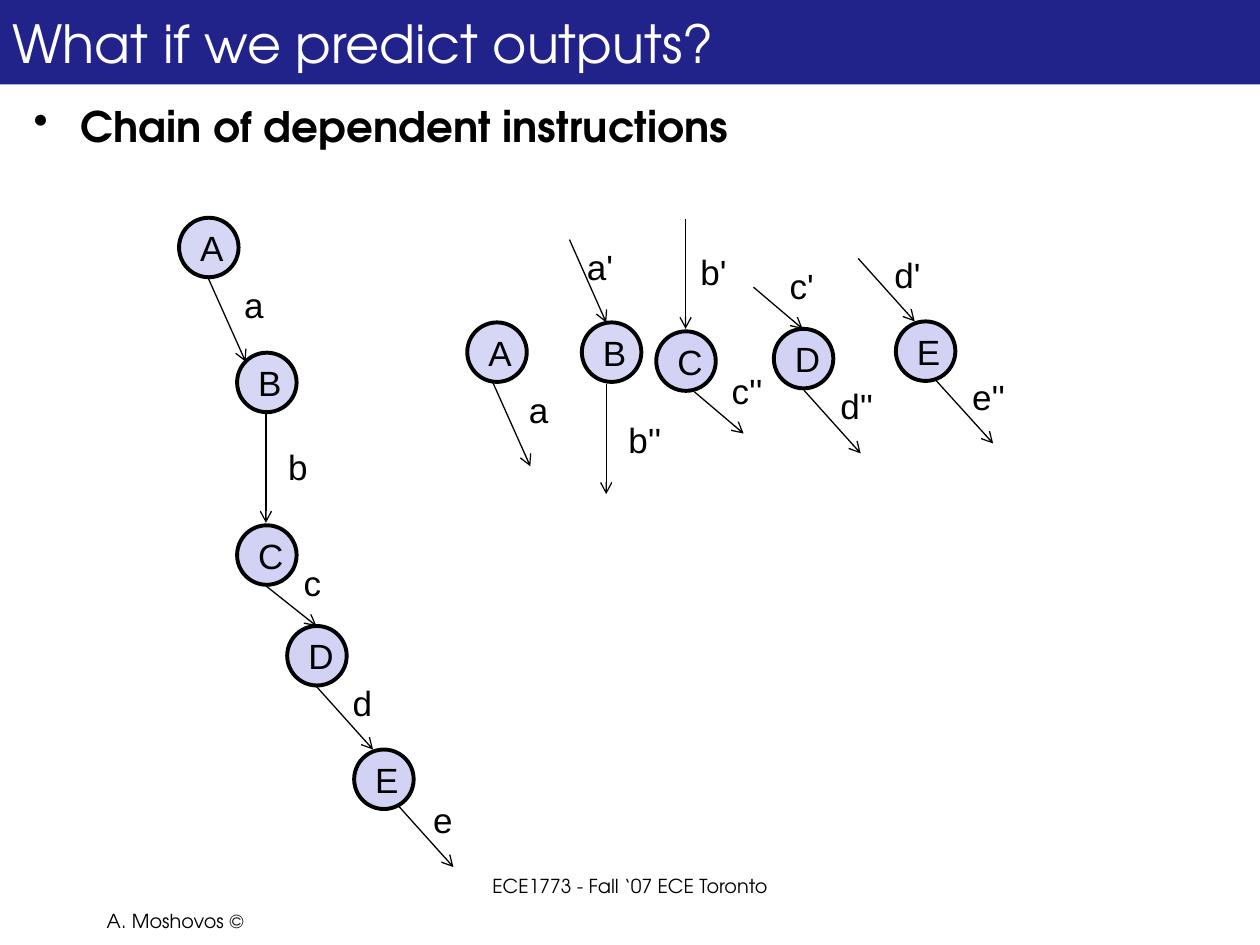
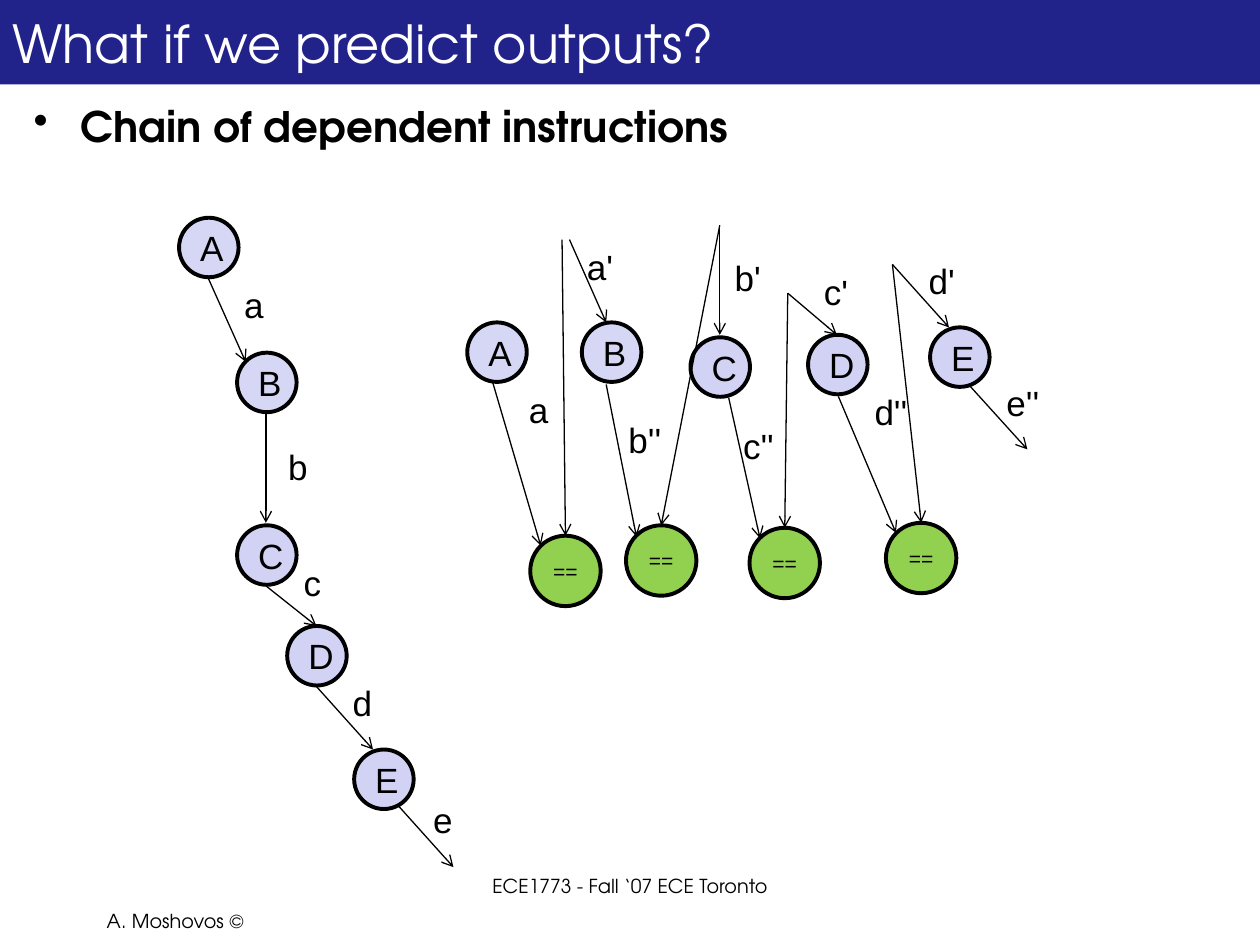
import pptx
import pptx.util
import pptx.dml.color
import pptx.enum.shapes
import pptx.enum.text
import pptx.oxml
import pptx.oxml.ns

Cm, Pt = pptx.util.Cm, pptx.util.Pt
Align = pptx.enum.text.PP_ALIGN
Anchor = pptx.enum.text.MSO_ANCHOR
Fit = pptx.enum.text.MSO_AUTO_SIZE

NAVY, WHITE, BLACK, GREEN = "22228B", "FFFFFF", "000000", "92D050"
FILLS = {"A": "D6D6F5", "B": "D6D6F5", "C": "D2D2F4", "D": "D2D2F4", "E": "D2D2F4"}
HEAD, BODY = "TeX Gyre Adventor", "Arial"
NODE, TEST = 1.2, 1.42
SHIFT = (0.69, 0.12)

TITLE = "What if we predict outputs?"
POINT = "Chain of dependent instructions"
FOOTS = [
    ("A. Moshovos ©", (1.9, 18.21, 5.28, 0.8), Align.LEFT),
    ("ECE1773 - Fall ‘07 ECE Toronto", (8.26, 17.5, 8.89, 1.07), Align.CENTER),
]

CHAIN = {"A": (3.61, 4.39), "B": (4.78, 7.11), "C": (4.78, 10.59),
         "D": (5.79, 12.62), "E": (7.14, 15.11)}
LINKS = {
    "a": [(4.19, 5.59), (4.95, 7.29), (4.67, 5.59)],
    "b": [(5.36, 8.33), (5.36, 10.54), (5.56, 8.86)],
    "c": [(5.36, 11.81), (6.38, 12.62), (5.87, 11.2)],
    "d": [(6.38, 13.84), (7.52, 15.11), (6.86, 13.61)],
    "e": [(8, 16.21), (9.14, 17.48), (8.48, 15.98)],
}
SPLIT = {"A": (9.42, 6.5), "B": (11.73, 6.5), "C": (13.23, 6.68),
         "D": (15.6, 6.63), "E": (18.06, 6.48)}
GUESS = {
    "a'": [(11.48, 4.83), (12.22, 6.5), (11.58, 4.83)],
    "b'": [(13.82, 4.42), (13.82, 6.63), (13.87, 4.93)],
    "c'": [(15.19, 5.79), (16.18, 6.63), (15.67, 5.21)],
    "d'": [(17.3, 5.21), (18.44, 6.48), (17.78, 4.98)],
}
OUTS = {
    "a": [(9.93, 7.7), (10.69, 9.4), (10.41, 7.7)],
    "b''": [(12.22, 7.75), (12.22, 9.96), (12.42, 8.31)],
    "c''": [(14, 7.9), (14.99, 8.74), (14.5, 7.32)],
    "d''": [(16.21, 7.87), (17.35, 9.14), (16.69, 7.62)],
    "e''": [(18.87, 7.67), (20.02, 8.94), (19.35, 7.44)],
}
ENDS = {"a": (10.9, 11), "b''": (12.83, 10.82), "c''": (15.32, 10.85), "d''": (18.06, 10.74)}
SPOTS = {"c''": (14.73, 8.43)}
TESTS = {"a'": (10.69, 10.8), "b'": (12.62, 10.59), "c'": (15.11, 10.64), "d'": (17.86, 10.54)}
STARTS = {"a'": (11.33, 4.83)}


def color(code):
    return pptx.dml.color.RGBColor.from_string(code)


def write(shape, text, size=20, font=BODY, ink=BLACK, bold=False,
          align=Align.LEFT, anchor=Anchor.TOP, wrap=True, fit=Fit.NONE):
    frame = shape.text_frame
    frame.word_wrap, frame.auto_size = wrap, fit
    frame.vertical_anchor = anchor
    para = frame.paragraphs[0]
    para.alignment = align
    run = para.add_run()
    run.text = text
    run.font.size, run.font.name, run.font.bold = Pt(size), font, bold
    run.font.color.rgb = color(ink)
    return para


def box(slide, place, text, **form):
    return write(slide.shapes.add_textbox(*map(Cm, place)), text, **form)


def disc(slide, spot, width, text, fill, size=20):
    kind = pptx.enum.shapes.MSO_SHAPE.OVAL
    shape = slide.shapes.add_shape(kind, *map(Cm, (*spot, width, width)))
    shape.shadow.inherit = False
    shape.fill.solid()
    shape.fill.fore_color.rgb = color(fill)
    shape.line.color.rgb = color(BLACK)
    shape.line.width = Pt(2.25)
    write(shape, text, size=size, align=Align.CENTER, anchor=Anchor.MIDDLE)


def arrow(slide, start, end):
    kind = pptx.enum.shapes.MSO_CONNECTOR.STRAIGHT
    line = slide.shapes.add_connector(kind, *map(Cm, (*start, *end)))
    line.line.color.rgb = color(BLACK)
    line.line.width = Pt(0.75)
    tip = pptx.oxml.parse_xml(f'<a:tailEnd {pptx.oxml.ns.nsdecls("a")} type="arrow"/>')
    line.line._get_or_add_ln().append(tip)
    flat = pptx.oxml.parse_xml(f'<a:effectLst {pptx.oxml.ns.nsdecls("a")}/>')
    line._element.spPr.append(flat)


def graph(slide, nodes, *groups):
    for name, spot in nodes.items():
        disc(slide, spot, NODE, name, FILLS[name])
    for group in groups:
        for name, (start, end, spot) in group.items():
            arrow(slide, start, end)
            width = 0.78 + 0.13 * len(name)
            box(slide, (*spot, width, 1.11), name, wrap=False, fit=Fit.SHAPE_TO_FIT_TEXT)


def move(spot):
    return tuple(a + b for a, b in zip(spot, SHIFT))


def shift(group, keep):
    return {name: spots if name in keep else [move(spot) for spot in spots]
            for name, spots in group.items()}


def base(deck):
    slide = deck.slides.add_slide(deck.slide_layouts[5])
    title = slide.shapes.title
    title.left, title.top, title.width, title.height = map(Cm, (0, 0, 25.4, 1.7))
    title.fill.solid()
    title.fill.fore_color.rgb = color(NAVY)
    write(title, TITLE, size=30, font=HEAD, ink=WHITE, anchor=Anchor.MIDDLE)
    para = box(slide, (0.43, 1.9, 24.56, 16.3), POINT, size=24, font=HEAD, bold=True)
    para.space_before = Pt(4.8)
    props = para._p.get_or_add_pPr()
    props.set("marL", str(Cm(0.95)))
    props.set("indent", str(Cm(-0.95)))
    props.append(pptx.oxml.parse_xml(f'<a:buChar {pptx.oxml.ns.nsdecls("a")} char="•"/>'))
    for text, place, align in FOOTS:
        box(slide, place, text, size=11, font=HEAD, align=align)
    graph(slide, CHAIN, LINKS)
    return slide


def predict(deck):
    graph(base(deck), SPLIT, GUESS, OUTS)


def check(deck):
    slide = base(deck)
    nodes = {name: spot if name in "AB" else move(spot) for name, spot in SPLIT.items()}
    guess = shift(GUESS, ["a'"])
    outs = {name: [start, ENDS.get(name, end), SPOTS.get(name, spot)]
            for name, (start, end, spot) in shift(OUTS, ["a", "b''"]).items()}
    graph(slide, nodes, guess, outs)
    for name, (left, top) in TESTS.items():
        disc(slide, (left, top), TEST, "==", GREEN, size=12)
        arrow(slide, STARTS.get(name, guess[name][0]), (left + TEST / 2, top))


def main():
    deck = pptx.Presentation()
    deck.slide_width, deck.slide_height = Cm(25.4), Cm(19.05)
    predict(deck)
    check(deck)
    deck.save("out.pptx")


if __name__ == "__main__":
    main()
